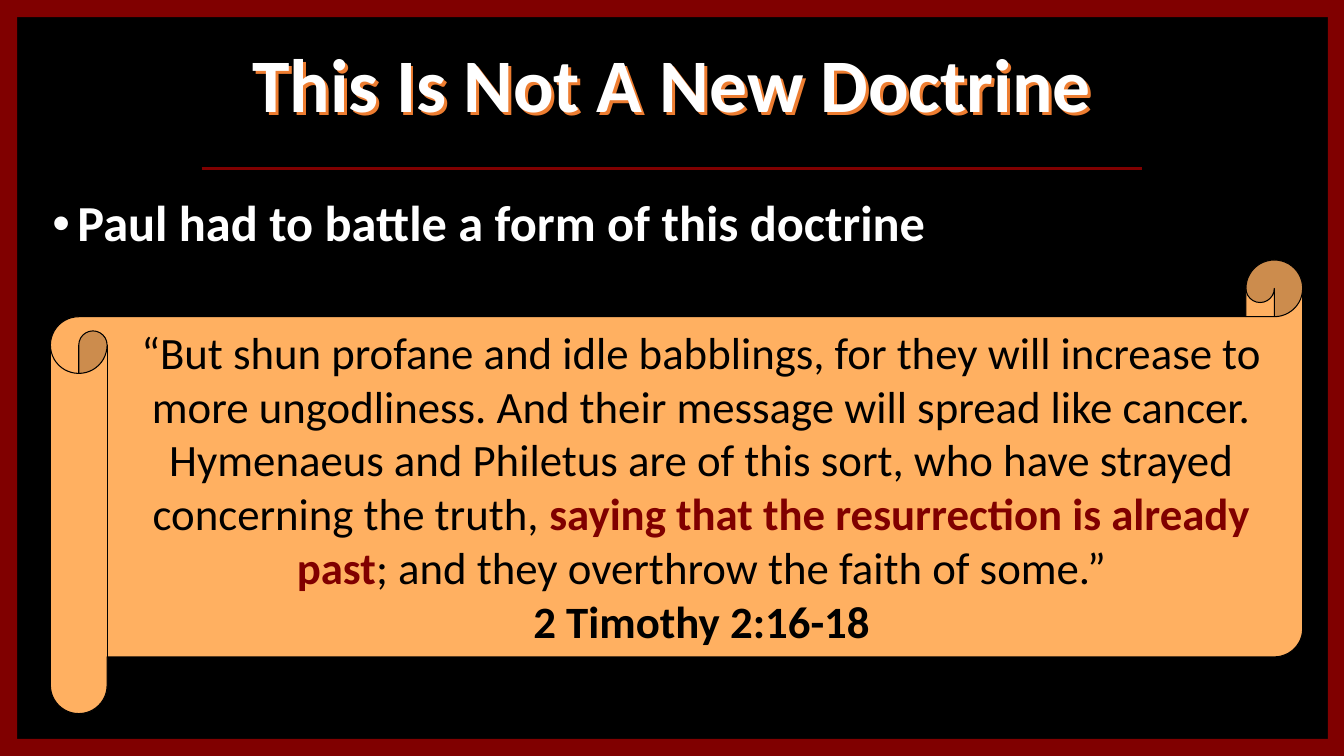
from lxml.etree import SubElement
from pptx import Presentation
from pptx.dml.color import RGBColor
from pptx.enum.shapes import MSO_CONNECTOR, MSO_SHAPE
from pptx.enum.text import MSO_ANCHOR, PP_ALIGN
from pptx.oxml.ns import qn
from pptx.util import Inches, Pt

# Content
TITLE = "This Is Not A New Doctrine"
POINT = "Paul had to battle a form of this doctrine"
QUOTE = [  # text, emphasised
    ("“But shun profane and idle babblings, for they will increase to more "
     "ungodliness. And their message will spread like cancer. Hymenaeus and "
     "Philetus are of this sort, who have strayed concerning the truth, ", False),
    ("saying that the resurrection is already past", True),
    ("; and they overthrow the faith of some.”", False),
]
REFERENCE = "2 Timothy 2:16-18"

# Style
FONT = "Calibri"
BLACK = RGBColor(0x00, 0x00, 0x00)
WHITE = RGBColor(0xFF, 0xFF, 0xFF)
MAROON = RGBColor(0x80, 0x00, 0x00)
PARCHMENT = RGBColor(0xFF, 0xB0, 0x61)
TITLE_SHADOW = "ED7D31"
WIDTH, HEIGHT, BORDER = 13.33, 7.5, 0.17

presentation = Presentation()
presentation.slide_width = Inches(WIDTH)
presentation.slide_height = Inches(HEIGHT)
slide = presentation.slides.add_slide(presentation.slide_layouts[6])
slide.background.fill.solid()
slide.background.fill.fore_color.rgb = BLACK


def add_text(left, top, width, height, size, color, bold=None):
    box = slide.shapes.add_textbox(*map(Inches, (left, top, width, height)))
    box.text_frame.word_wrap = True
    paragraph = box.text_frame.paragraphs[0]
    font = paragraph.font
    font.name, font.size, font.bold = FONT, Pt(size), bold
    font.color.rgb = color
    return box, paragraph


def add_filled(kind, left, top, width, height, color):
    shape = slide.shapes.add_shape(kind, *map(Inches, (left, top, width, height)))
    shape.shadow.inherit = False
    shape.fill.solid()
    shape.fill.fore_color.rgb = color
    shape.line.fill.background()
    return shape


# Title with an offset shadow
title, paragraph = add_text(1.83, 0.25, 9.67, 1.25, 54, WHITE, True)
title.text_frame.vertical_anchor = MSO_ANCHOR.MIDDLE
paragraph.alignment = PP_ALIGN.CENTER
paragraph.line_spacing = 0.9
paragraph.add_run().text = TITLE
effects = SubElement(title._element.spPr, qn("a:effectLst"))
shadow = SubElement(effects, qn("a:outerShdw"), dist="38100", dir="2700000", algn="tl")
SubElement(shadow, qn("a:srgbClr"), val=TITLE_SHADOW)

# Bullet point
point, paragraph = add_text(0.42, 1.92, 12.58, 0.83, 36, WHITE, True)
properties = paragraph._p.get_or_add_pPr()
indent = Inches(0.25)
properties.set("marL", str(indent))
properties.set("indent", str(-indent))
bullet_font = SubElement(properties, qn("a:buFont"), typeface="Arial")
bullet_font.addnext(SubElement(properties, qn("a:buChar"), char="•"))
# The schema puts the bullet ahead of the default run properties
properties.append(properties.find(qn("a:defRPr")))
paragraph.line_spacing = 0.9
paragraph.add_run().text = POINT

# Divider under the title
divider = slide.shapes.add_connector(
    MSO_CONNECTOR.STRAIGHT, Inches(2), Inches(1.67), Inches(11.33), Inches(1.67))
divider.line.color.rgb = MAROON
divider.line.width = Pt(2)
SubElement(divider._element.spPr, qn("a:effectLst"))

# Scroll with the quotation
scroll = add_filled(MSO_SHAPE.HORIZONTAL_SCROLL, 0.5, 2.58, 12.42, 4.5, PARCHMENT)
scroll.adjustments[0] = 0.125
scroll.line.color.rgb = BLACK
scroll.line.width = Pt(0.75)

quote, paragraph = add_text(1.25, 3.17, 11.42, 3.33, 32, BLACK)
paragraph.alignment = PP_ALIGN.CENTER
for text, emphasised in QUOTE:
    run = paragraph.add_run()
    run.text = text
    if emphasised:
        run.font.bold = True
        run.font.color.rgb = MAROON
paragraph.add_line_break()
reference = paragraph.add_run()
reference.text = REFERENCE
reference.font.bold = True

# Border around the slide
inner_width = 13.08
for left in (0, 13.17):
    add_filled(MSO_SHAPE.RECTANGLE, left, 0, BORDER, HEIGHT, MAROON)
for top in (0, HEIGHT - BORDER):
    add_filled(MSO_SHAPE.RECTANGLE, BORDER, top, inner_width, BORDER, MAROON)

presentation.save("out.pptx")
